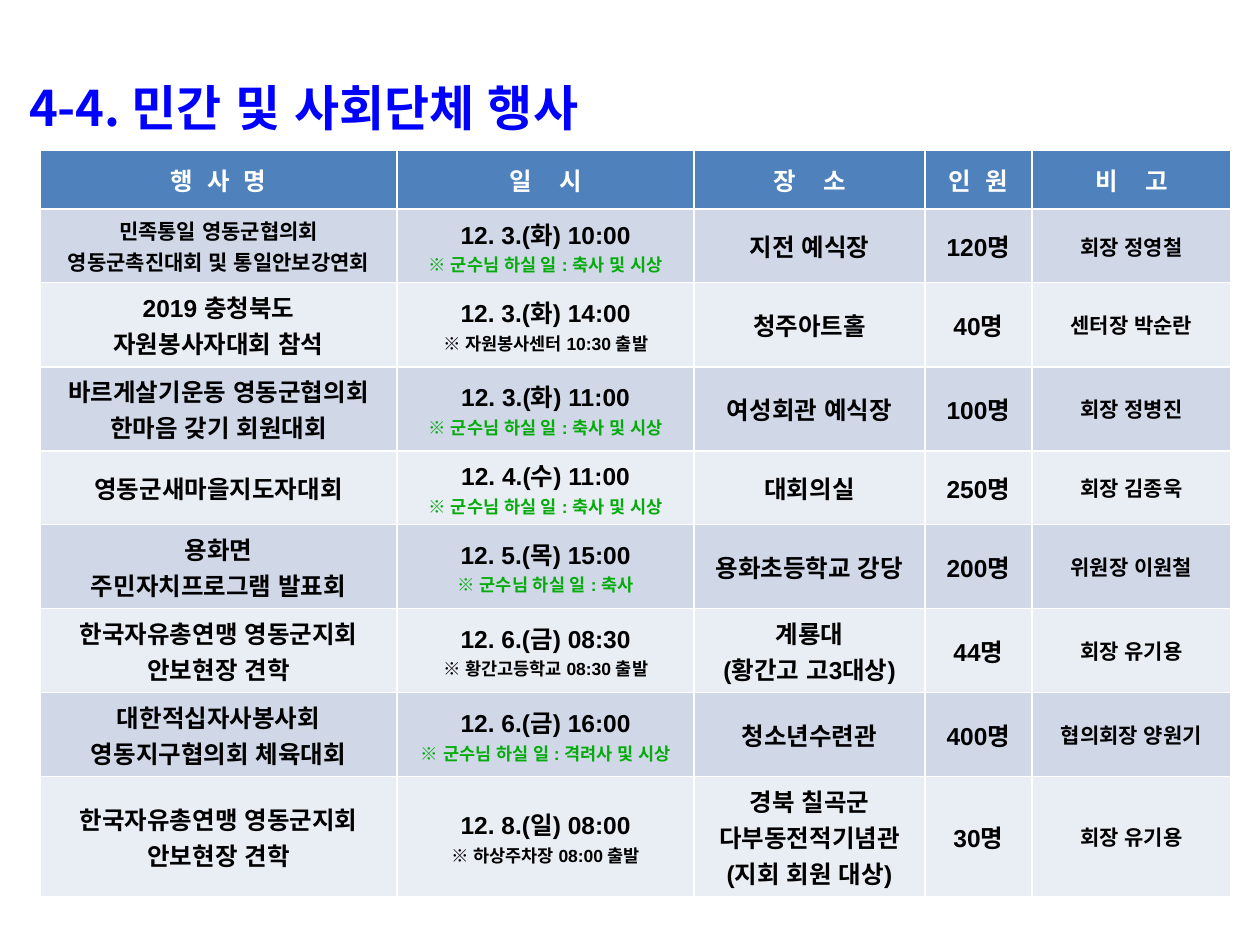
from pptx import Presentation
from pptx.dml.color import RGBColor
from pptx.enum.lang import MSO_LANGUAGE_ID as Lang
from pptx.enum.text import MSO_ANCHOR as Anchor, MSO_AUTO_SIZE as AutoSize, PP_ALIGN as Align
from pptx.util import Inches, Pt

HEADER_FILL = "4F81BD"
BAND_FILLS = ["D0D8E8", "E9EDF4"]
MAYOR_COLOR = "05AB0D"
MAYOR_MARK = "※ 군수님"

COLUMN_WIDTHS = [2.83, 2.36, 1.83, 0.85, 1.58]
ROW_HEIGHTS = [0.47] + [0.52] * 3 + [0.57] * 5
COLUMN_SIZES = [14, 14, 14, 14, 12]

HEADERS = ["행  사  명", "일    시", "장    소", "인  원", "비    고"]
EVENTS = [
    ["민족통일 영동군협의회\n영동군촉진대회 및 통일안보강연회",
     "12. 3.(화) 10:00\n※ 군수님 하실 일 : 축사 및 시상",
     "지전 예식장", "120명", "회장 정영철"],
    ["2019 충청북도\n자원봉사자대회 참석",
     "12. 3.(화) 14:00\n※ 자원봉사센터 10:30 출발",
     "청주아트홀", "40명", "센터장 박순란"],
    ["바르게살기운동 영동군협의회 한마음 갖기 회원대회",
     "12. 3.(화) 11:00\n※ 군수님 하실 일 : 축사 및 시상",
     "여성회관 예식장", "100명", "회장 정병진"],
    ["영동군새마을지도자대회",
     "12. 4.(수) 11:00\n※ 군수님 하실 일 : 축사 및 시상",
     "대회의실", "250명", "회장 김종욱"],
    ["용화면\n주민자치프로그램 발표회",
     "12. 5.(목) 15:00\n※ 군수님 하실 일 : 축사",
     "용화초등학교 강당", "200명", "위원장 이원철"],
    ["한국자유총연맹 영동군지회 안보현장 견학",
     "12. 6.(금) 08:30\n※ 황간고등학교 08:30 출발",
     "계룡대\n(황간고 고3대상)", "44명", "회장 유기용"],
    ["대한적십자사봉사회\n영동지구협의회 체육대회",
     "12. 6.(금) 16:00\n※ 군수님 하실 일 : 격려사 및 시상",
     "청소년수련관", "400명", "협의회장 양원기"],
    ["한국자유총연맹 영동군지회\n안보현장 견학",
     "12. 8.(일) 08:00\n※ 하상주차장 08:00 출발",
     "경북 칠곡군\n다부동전적기념관\n(지회 회원 대상)", "30명", "회장 유기용"],
]


def rgb(color):
    return RGBColor.from_string(color)


def write(para, text, size=14, color="000000", font="Arial", align=Align.CENTER, spacing=None):
    para.alignment = align
    para.line_spacing = spacing
    span = para.add_run()
    span.text = text
    span.font.name = font
    span.font.size = Pt(size)
    span.font.bold = True
    span.font.color.rgb = rgb(color)
    span.font.language_id = Lang.KOREAN


def fill_cell(cell, text, fill, size=14, color="000000"):
    """Write one paragraph per line; lines marked ※ are small notes."""
    cell.fill.solid()
    cell.fill.fore_color.rgb = rgb(fill)
    cell.vertical_anchor = Anchor.MIDDLE
    frame = cell.text_frame
    for index, line in enumerate(text.split("\n")):
        para = frame.add_paragraph() if index else frame.paragraphs[0]
        write(para, line,
              size=10 if line.startswith("※") else size,
              color=MAYOR_COLOR if line.startswith(MAYOR_MARK) else color)


def place_title(page, left, top, width, height):
    title = page.shapes.title
    title.left, title.top = Inches(left), Inches(top)
    title.width, title.height = Inches(width), Inches(height)
    frame = title.text_frame
    frame.auto_size = AutoSize.NONE
    frame.word_wrap = True
    frame.vertical_anchor = Anchor.TOP
    frame.margin_left = Inches(0.19)
    write(frame.paragraphs[0], "4-4. 민간 및 사회단체 행사", size=28, color="0000FF",
          font="Noto Sans CJK KR", align=Align.LEFT, spacing=1.5)


def place_event_table(page, left, top):
    table = page.shapes.add_table(
        len(EVENTS) + 1, len(HEADERS), Inches(left), Inches(top),
        Inches(sum(COLUMN_WIDTHS)), Inches(sum(ROW_HEIGHTS))).table
    for column, width in zip(table.columns, COLUMN_WIDTHS):
        column.width = Inches(width)
    for row, height in zip(table.rows, ROW_HEIGHTS):
        row.height = Inches(height)

    for column, text in enumerate(HEADERS):
        fill_cell(table.cell(0, column), text, HEADER_FILL, color="FFFFFF")
    for row, event in enumerate(EVENTS):
        for column, text in enumerate(event):
            # The first event name is long, so it is set smaller
            size = 12 if row == column == 0 else COLUMN_SIZES[column]
            fill_cell(table.cell(row + 1, column), text, BAND_FILLS[row % 2], size=size)


def main():
    deck = Presentation()
    deck.slide_width, deck.slide_height = Inches(10), Inches(7.5)
    page = deck.slides.add_slide(deck.slide_layouts[5])
    place_title(page, 0.04, 0.33, 10, 6.25)
    place_event_table(page, 0.32, 1.19)
    deck.save("out.pptx")


if __name__ == "__main__":
    main()
